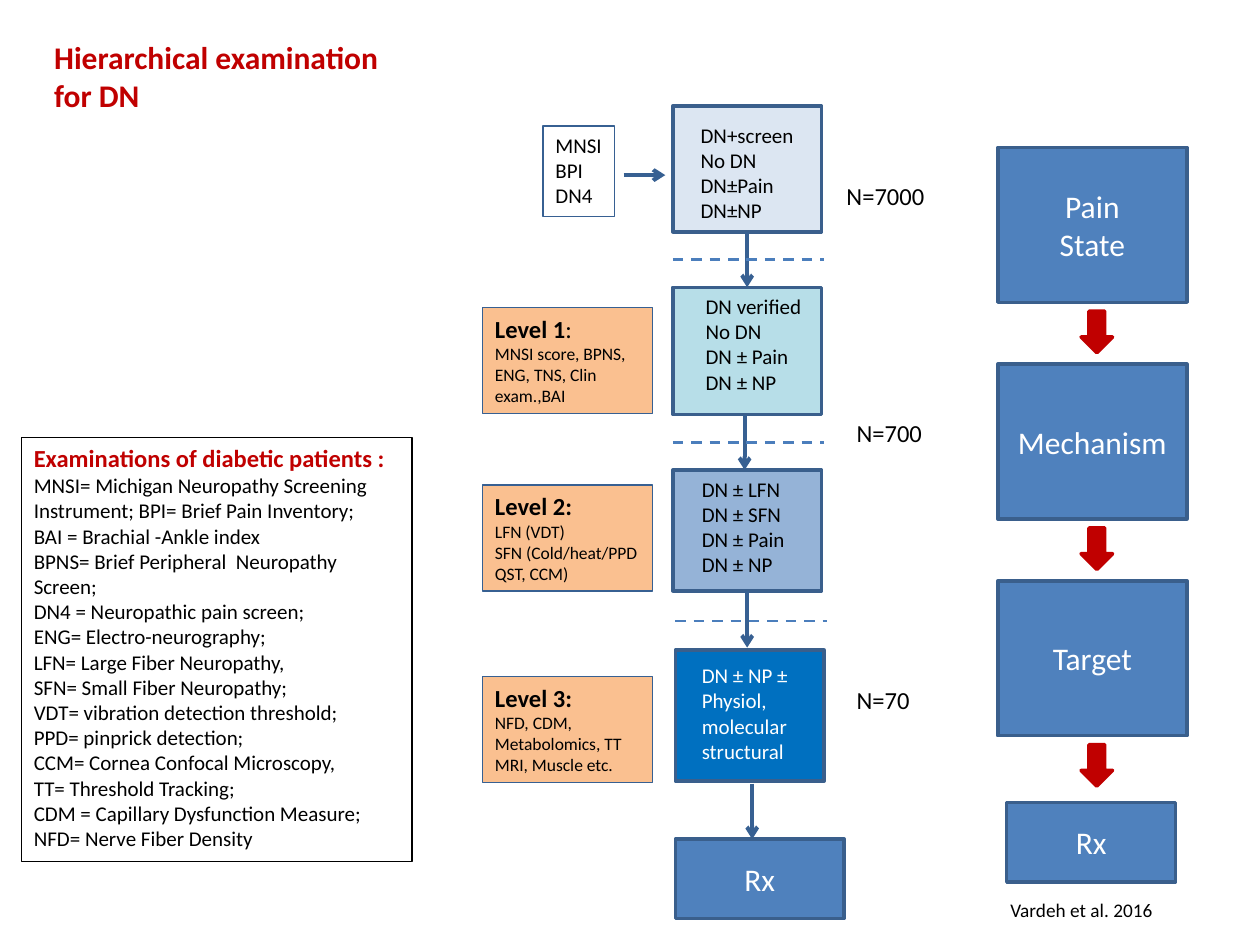
from lxml.etree import SubElement
from pptx import Presentation
from pptx.dml.color import RGBColor
from pptx.enum.dml import MSO_LINE
from pptx.enum.shapes import MSO_CONNECTOR, MSO_SHAPE
from pptx.enum.text import MSO_ANCHOR, PP_ALIGN
from pptx.oxml.ns import qn
from pptx.util import Inches, Pt

RED, BLUE, EDGE, ARROW = "C00000", "4F81BD", "3A5F8C", "376092"
PEACH, BLACK, WHITE = "FAC090", "000000", "FFFFFF"

TITLE = "Hierarchical examination for DN"

# (left, top, width, height), fill, text colour, (left inset, top inset), lines
STAGES = [
    ((5.34, 0.84, 1.18, 1), "DCE6F2", BLACK, (0.22, 0.13),
     ["DN+screen", "No DN", "DN±Pain", "DN±NP"]),
    ((5.34, 2.28, 1.18, 1.01), "B7DEE8", BLACK, (0.26, 0.05),
     ["DN verified", "No DN", "DN ± Pain", "DN ± NP"]),
    ((5.34, 3.73, 1.18, 0.96), "95B3D7", BLACK, (0.23, 0.05),
     ["DN ± LFN", "DN ± SFN", "DN ± Pain", "DN ± NP"]),
    ((5.36, 5.16, 1.18, 1.04), "0070C0", WHITE, (0.21, 0.1),
     ["DN ± NP ±", "Physiol,", "molecular", "structural"]),
]
SCREEN = ["MNSI", "BPI", "DN4"]

# top, wraps, heading runs, lines
LEVELS = [
    (2.44, True, [("Level 1", {"bold": True}), (":", {"bold": False})],
     ["MNSI score, BPNS, ENG, TNS, Clin exam.,BAI"]),
    (3.85, False, [("Level 2:", {"bold": True})],
     ["LFN (VDT)", "SFN (Cold/heat/PPD", "QST, CCM)"]),
    (5.37, True, [("Level 3:", {"bold": True})],
     ["NFD, CDM,", "Metabolomics, TT MRI, Muscle etc."]),
]

# x, top, length, across
ARROWS = [
    (5.93, 1.84, 0.44, False),
    (5.91, 3.29, 0.44, False),
    (5.93, 4.69, 0.45, False),
    (5.97, 6.22, 0.44, False),
    (4.95, 1.39, 0.33, True),
]
DASHES = [(5.34, 2.06), (5.34, 3.51), (5.36, 4.93)]

# box, size, text
NOTES = [
    ((6.62, 1.39, 0.83, 0.34), 14, "N=7000"),
    ((6.7, 3.27, 0.73, 0.34), 14, "N=700"),
    ((6.7, 5.39, 0.63, 0.34), 14, "N=70"),
    ((7.92, 7.08, 1.35, 0.28), 11, "Vardeh et al. 2016"),
]

PATH = [["Pain", "State"], ["Mechanism"], ["Target"]]
ENDS = [(5.36, 6.66), (7.99, 6.37)]

KEY_HEAD = "Examinations of diabetic patients :"
KEY = [
    "MNSI= Michigan Neuropathy Screening Instrument; BPI= Brief Pain Inventory;",
    "BAI = Brachial -Ankle index",
    "BPNS= Brief Peripheral  Neuropathy Screen;",
    "DN4 = Neuropathic pain screen;",
    "ENG= Electro-neurography;",
    "LFN= Large Fiber Neuropathy,",
    "SFN= Small Fiber Neuropathy;",
    "VDT= vibration detection threshold;",
    "PPD= pinprick detection;",
    "CCM= Cornea Confocal Microscopy,",
    "TT= Threshold Tracking;",
    "CDM = Capillary Dysfunction Measure;",
    "NFD= Nerve Fiber Density",
]


def color(code):
    return RGBColor.from_string(code)


def write(shape, paras, size=12, ink=BLACK, align=PP_ALIGN.LEFT,
          anchor=MSO_ANCHOR.TOP, wrap=True, inset=None):
    """Fill a shape; a paragraph is a string or a list of (text, format) runs."""
    frame = shape.text_frame
    frame.word_wrap = wrap
    frame.vertical_anchor = anchor
    if inset:
        frame.margin_left, frame.margin_top = map(Inches, inset)
        frame.margin_right = 0
    for i, para in enumerate(paras):
        line = frame.add_paragraph() if i else frame.paragraphs[0]
        line.alignment = align
        for text, form in [(para, {})] if isinstance(para, str) else para:
            run = line.add_run()
            run.text = text
            look = {"name": "Calibri", "size": Pt(size), "ink": ink, **form}
            run.font.color.rgb = color(look.pop("ink"))
            for name, value in look.items():
                setattr(run.font, name, value)


def block(slide, box, fill=None, edge=EDGE, width=2, kind=MSO_SHAPE.RECTANGLE):
    shape = slide.shapes.add_shape(kind, *map(Inches, box))
    shape.shadow.inherit = False
    if fill:
        shape.fill.solid()
        shape.fill.fore_color.rgb = color(fill)
    else:
        shape.fill.background()
    shape.line.color.rgb = color(edge)
    shape.line.width = Pt(width)
    return shape


def rule(slide, x, y, dx, dy, ink, width):
    ends = map(Inches, (x, y, x + dx, y + dy))
    link = slide.shapes.add_connector(MSO_CONNECTOR.STRAIGHT, *ends)
    link.line.color.rgb = color(ink)
    link.line.width = Pt(width)
    SubElement(link._element.spPr, qn("a:effectLst"))
    return link


def main():
    deck = Presentation()
    deck.slide_width, deck.slide_height = Inches(10), Inches(7.5)
    slide = deck.slides.add_slide(deck.slide_layouts[5])

    title = slide.shapes.title
    spot = zip(("left", "top", "width", "height"), (0.33, 0.25, 2.83, 0.71))
    for name, value in spot:
        setattr(title, name, Inches(value))
    write(title, [[(TITLE, {"bold": True})]], 18, RED)

    for box, fill, ink, inset, lines in STAGES:
        write(block(slide, box, fill), lines, ink=ink, inset=inset)
    screen = block(slide, (4.31, 1, 0.57, 0.72), edge=ARROW, width=0.75)
    write(screen, SCREEN, wrap=False)

    for top, wrap, head, lines in LEVELS:
        level = block(slide, (3.83, top, 1.35, 0.84), PEACH, ARROW, 0.75)
        head = [(text, {"size": Pt(14), **form}) for text, form in head]
        write(level, [head, *lines], 10, wrap=wrap)

    for x, y, size, across in ARROWS:
        dx, dy = (size, 0) if across else (0, size)
        link = rule(slide, x, y, dx, dy, ARROW, 2.25)
        SubElement(link.line._get_or_add_ln(), qn("a:tailEnd"), type="arrow")
    for x, y in DASHES:
        rule(slide, x, y, 1.2, 0, "4B7EBC", 1.5).line.dash_style = MSO_LINE.DASH

    key = block(slide, (0.17, 3.47, 3.1, 3.37), edge=BLACK, width=0.75)
    head = (KEY_HEAD, {"size": Pt(14), "bold": True, "ink": RED})
    write(key, [[head], *KEY])

    for box, size, text in NOTES:
        note = slide.shapes.add_textbox(*map(Inches, box))
        write(note, [text], size, wrap=False)

    mid = {"size": 18, "ink": WHITE, "align": PP_ALIGN.CENTER,
           "anchor": MSO_ANCHOR.MIDDLE}
    for i, lines in enumerate(PATH):
        step = block(slide, (7.92, 1.17 + 1.72 * i, 1.5, 1.23), BLUE)
        write(step, lines, **mid)
        arrow = block(slide, (8.54, 2.51 + 1.72 * i, 0.33, 0.25), RED, RED,
                      kind=MSO_SHAPE.RIGHT_ARROW)
        arrow.rotation = 90
    for x, y in ENDS:
        write(block(slide, (x, y, 1.34, 0.63), BLUE), ["Rx"], **mid)

    deck.save("out.pptx")


if __name__ == "__main__":
    main()
